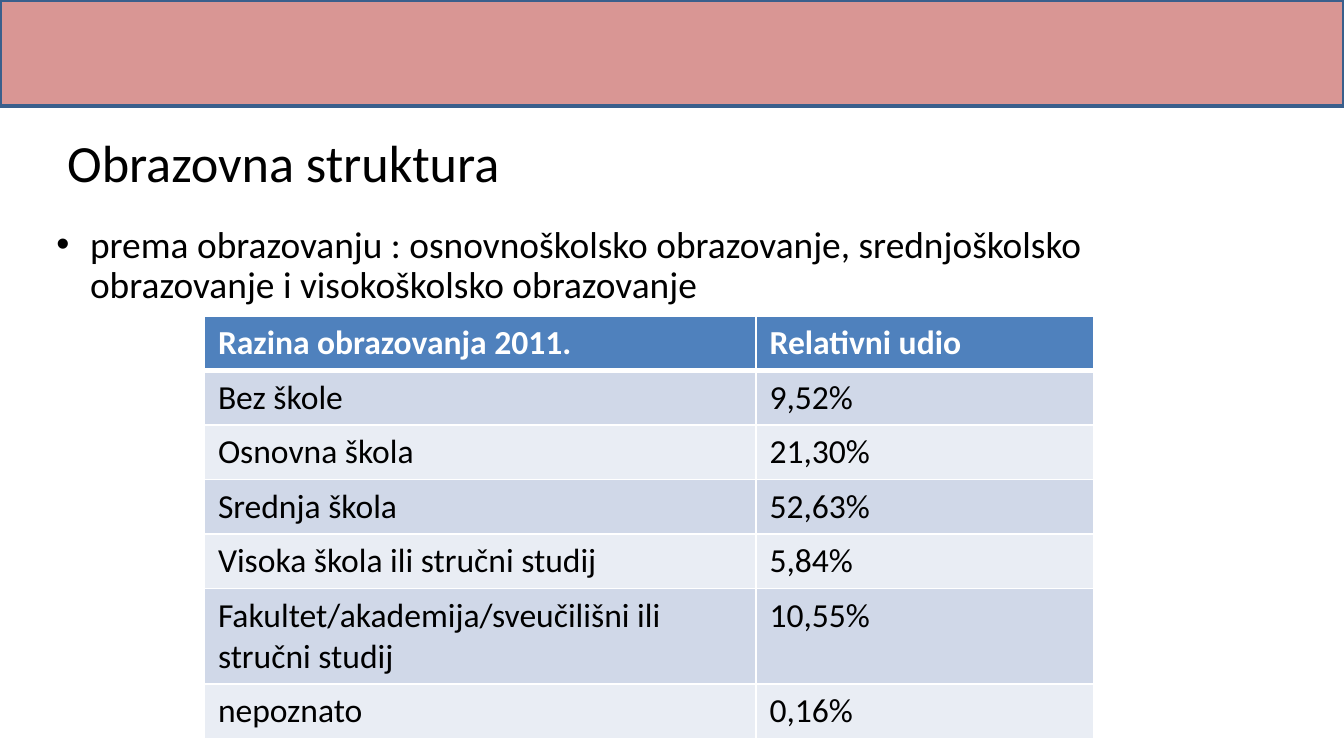
from dataclasses import dataclass

from lxml import etree
from pptx import Presentation
from pptx import util as u
from pptx.dml.color import RGBColor
from pptx.enum import shapes, text
from pptx.oxml.ns import qn

WHITE = RGBColor(0xFF, 0xFF, 0xFF)
BLACK = RGBColor(0, 0, 0)
ROSE = RGBColor(0xD9, 0x96, 0x94)
NAVY = RGBColor(0x3A, 0x5F, 0x8C)
HEADER_BLUE = RGBColor(0x4F, 0x81, 0xBD)
BANDS = (RGBColor(0xD0, 0xD8, 0xE8), RGBColor(0xE9, 0xED, 0xF4))
FONT = "Calibri"
WIDTH = u.Inches(10)
HEIGHT = WIDTH * 9 // 16


@dataclass(frozen=True)
class Area:
    """A rectangle in percent of the slide's width and height."""
    left: float
    top: float
    width: float
    height: float

    def lengths(self) -> tuple[int, int, int, int]:
        return (int(WIDTH * self.left / 100), int(HEIGHT * self.top / 100),
                int(WIDTH * self.width / 100), int(HEIGHT * self.height / 100))


@dataclass(frozen=True)
class Level:
    """One table row: education level, its share and relative row height."""
    name: str
    share: str
    weight: int = 4


BANNER = Area(0, 0, 100, 14.06)
TITLE = Area(5, 18.13, 90, 7.47)
BODY = Area(4.2, 28.65, 90, 18.68)
TABLE = Area(15.22, 41.83, 66.2, 55.12)
COLUMN_SHARES = (0.62, 0.38)
LEVELS = (
    Level("Razina obrazovanja 2011.", "Relativni udio"),
    Level("Bez škole", "9,52%"),
    Level("Osnovna škola", "21,30%"),
    Level("Srednja škola", "52,63%"),
    Level("Visoka škola ili stručni studij", "5,84%"),
    Level("Fakultet/akademija/sveučilišni ili stručni studij", "10,55%", 7),
    Level("nepoznato", "0,16%"),
)


def write(frame, words: str, *, size: float, color: RGBColor = BLACK,
          bold: bool = False, spacing: float = 1.0, bullet: bool = False) -> None:
    para = frame.paragraphs[0]
    para.alignment = text.PP_ALIGN.LEFT
    para.line_spacing = spacing
    para.space_before = u.Pt(0)
    if bullet:
        props = para._p.get_or_add_pPr()
        props.set("marL", str(u.Inches(0.25)))
        props.set("indent", str(-u.Inches(0.25)))
        etree.SubElement(props, qn("a:buChar")).set("char", "•")
    span = para.add_run()
    span.text = words
    span.font.name = FONT
    span.font.size = u.Pt(size)
    span.font.bold = bold
    span.font.color.rgb = color


def place(box, area: Area, anchor, inset_top: float = 0) -> None:
    box.left, box.top, box.width, box.height = area.lengths()
    frame = box.text_frame
    frame.word_wrap = True
    frame.auto_size = text.MSO_AUTO_SIZE.NONE
    frame.vertical_anchor = anchor
    frame.margin_left = frame.margin_right = frame.margin_bottom = 0
    frame.margin_top = u.Inches(inset_top)


def add_borders(cell, bottom: float) -> None:
    props = cell._tc.get_or_add_tcPr()
    for side, points in (("L", 1), ("R", 1), ("T", 1), ("B", bottom)):
        line = etree.SubElement(props, qn(f"a:ln{side}"), w=str(u.Pt(points)))
        fill = etree.SubElement(line, qn("a:solidFill"))
        etree.SubElement(fill, qn("a:srgbClr"), val=str(WHITE))


def add_level_table(page) -> None:
    table = page.shapes.add_table(len(LEVELS), 2, *TABLE.lengths()).table
    _, _, width, height = TABLE.lengths()
    total = sum(level.weight for level in LEVELS)
    for column, share in zip(table.columns, COLUMN_SHARES):
        column.width = int(width * share)
    for index, level in enumerate(LEVELS):
        header = index == 0
        table.rows[index].height = int(height * level.weight / total)
        for cell, words in zip(table.rows[index].cells, (level.name, level.share)):
            add_borders(cell, bottom=3 if header else 1)
            cell.fill.solid()
            cell.fill.fore_color.rgb = HEADER_BLUE if header else BANDS[(index - 1) % 2]
            write(cell.text_frame, words, size=18, bold=header,
                  color=WHITE if header else BLACK)


def main() -> None:
    deck = Presentation()
    deck.slide_width, deck.slide_height = WIDTH, HEIGHT
    page = deck.slides.add_slide(deck.slide_layouts[1])

    # Banner
    banner = page.shapes.add_shape(shapes.MSO_SHAPE.RECTANGLE, *BANNER.lengths())
    banner.shadow.inherit = False
    banner.fill.solid()
    banner.fill.fore_color.rgb = ROSE
    banner.line.color.rgb = NAVY
    banner.line.width = u.Pt(2)

    # Title and bullet
    title, body = page.shapes.title, page.placeholders[1]
    place(title, TITLE, text.MSO_ANCHOR.MIDDLE)
    write(title.text_frame, "Obrazovna struktura", size=28, spacing=0.9)
    place(body, BODY, text.MSO_ANCHOR.TOP, inset_top=0.07)
    write(body.text_frame,
          "prema obrazovanju : osnovnoškolsko obrazovanje, srednjoškolsko "
          "obrazovanje i visokoškolsko obrazovanje",
          size=20, spacing=0.9, bullet=True)

    # Education levels
    add_level_table(page)
    deck.save("out.pptx")


if __name__ == "__main__":
    main()
